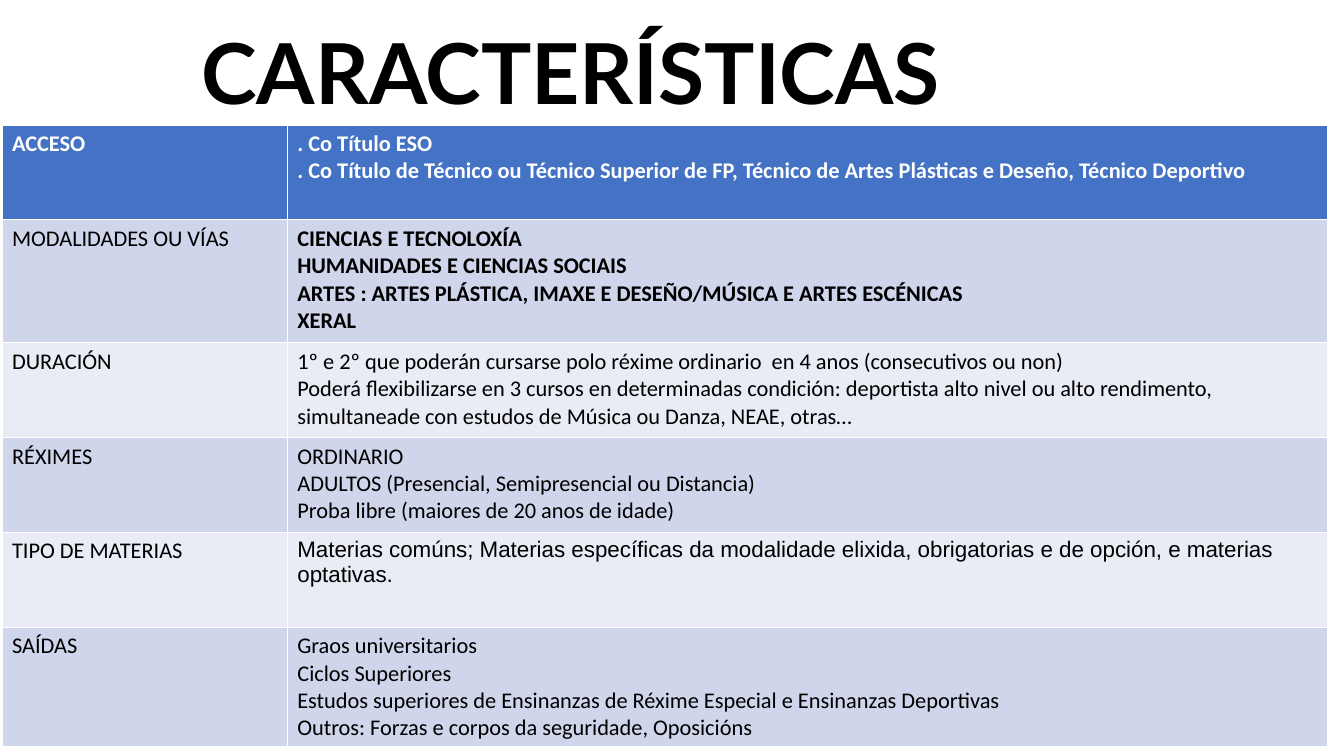
from pptx import Presentation
from pptx.dml.color import RGBColor
from pptx.enum.text import MSO_ANCHOR, MSO_AUTO_SIZE, PP_ALIGN
from pptx.util import Cm, Pt

BLACK = RGBColor(0x00, 0x00, 0x00)
WHITE = RGBColor(0xFF, 0xFF, 0xFF)
HEADER_BLUE = RGBColor(0x44, 0x72, 0xC4)
BAND_DARK = RGBColor(0xCF, 0xD5, 0xEA)
BAND_LIGHT = RGBColor(0xE9, 0xEB, 0xF5)

COLUMN_WIDTHS = [7.19, 26.21]
# Row height in cm, label, lines of detail
ROWS = [
    (2.39, "ACCESO", [
        ". Co Título ESO",
        ". Co Título de Técnico ou Técnico Superior de FP, Técnico de Artes Plásticas e Deseño, "
        "Técnico Deportivo"]),
    (3.1, "MODALIDADES OU VÍAS", [
        "CIENCIAS E TECNOLOXÍA",
        "HUMANIDADES E CIENCIAS SOCIAIS",
        "ARTES : ARTES PLÁSTICA, IMAXE E DESEÑO/MÚSICA E ARTES ESCÉNICAS",
        "XERAL"]),
    (2.39, "DURACIÓN", [
        "1º e 2º que poderán cursarse polo réxime ordinario  en 4 anos (consecutivos ou non)",
        "Poderá flexibilizarse en 3 cursos en determinadas condición: deportista alto nivel ou "
        "alto rendimento, simultaneade con estudos de Música ou Danza, NEAE, otras…"]),
    (2.39, "RÉXIMES", [
        "ORDINARIO",
        "ADULTOS (Presencial, Semipresencial ou Distancia)",
        "Proba libre (maiores de 20 anos de idade)"]),
    (2.39, "TIPO DE MATERIAS", [
        "Materias comúns; Materias específicas da modalidade elixida, obrigatorias e de opción, "
        "e materias optativas."]),
    (2.95, "SAÍDAS", [
        "Graos universitarios",
        "Ciclos Superiores",
        "Estudos superiores de Ensinanzas de Réxime Especial e Ensinanzas Deportivas",
        "Outros: Forzas e corpos da seguridade, Oposicións"]),
]
BOLD_DETAILS = {"ACCESO", "MODALIDADES OU VÍAS"}
ARIAL_DETAILS = {"TIPO DE MATERIAS"}

presentation = Presentation()
presentation.slide_width = Cm(33.87)
presentation.slide_height = Cm(19.05)
slide = presentation.slides.add_slide(presentation.slide_layouts[5])

title = slide.shapes.title
title.left, title.top, title.width, title.height = Cm(2.33), Cm(0.36), Cm(29.21), Cm(3.18)
title_frame = title.text_frame
title_frame.text = "CARACTERÍSTICAS"
title_frame.auto_size = MSO_AUTO_SIZE.NONE
title_frame.vertical_anchor = MSO_ANCHOR.MIDDLE
title_frame.margin_left = Cm(2.74)
paragraph = title_frame.paragraphs[0]
paragraph.alignment = PP_ALIGN.LEFT
paragraph.line_spacing = 0.9
paragraph.font.name = "Lato"
paragraph.font.size = Pt(60)
paragraph.font.bold = True
paragraph.font.color.rgb = BLACK

table = slide.shapes.add_table(
    len(ROWS), len(COLUMN_WIDTHS), Cm(0.05), Cm(3.15),
    Cm(sum(COLUMN_WIDTHS)), Cm(sum(row[0] for row in ROWS))).table
for column, width in zip(table.columns, COLUMN_WIDTHS):
    column.width = Cm(width)

for row_index, (height, label, details) in enumerate(ROWS):
    table.rows[row_index].height = Cm(height)
    is_header = row_index == 0
    if is_header:
        fill_color = HEADER_BLUE
    else:
        fill_color = BAND_DARK if row_index % 2 else BAND_LIGHT
    for column_index, lines in enumerate([[label], details]):
        is_detail = column_index == 1
        cell = table.cell(row_index, column_index)
        cell.fill.solid()
        cell.fill.fore_color.rgb = fill_color
        cell.text = "\n".join(lines)
        for paragraph in cell.text_frame.paragraphs:
            font = paragraph.font
            font.name = "Arial" if is_detail and label in ARIAL_DETAILS else "Calibri"
            font.size = Pt(16)
            font.bold = is_header or (is_detail and label in BOLD_DETAILS)
            font.color.rgb = WHITE if is_header else BLACK

presentation.save("out.pptx")
